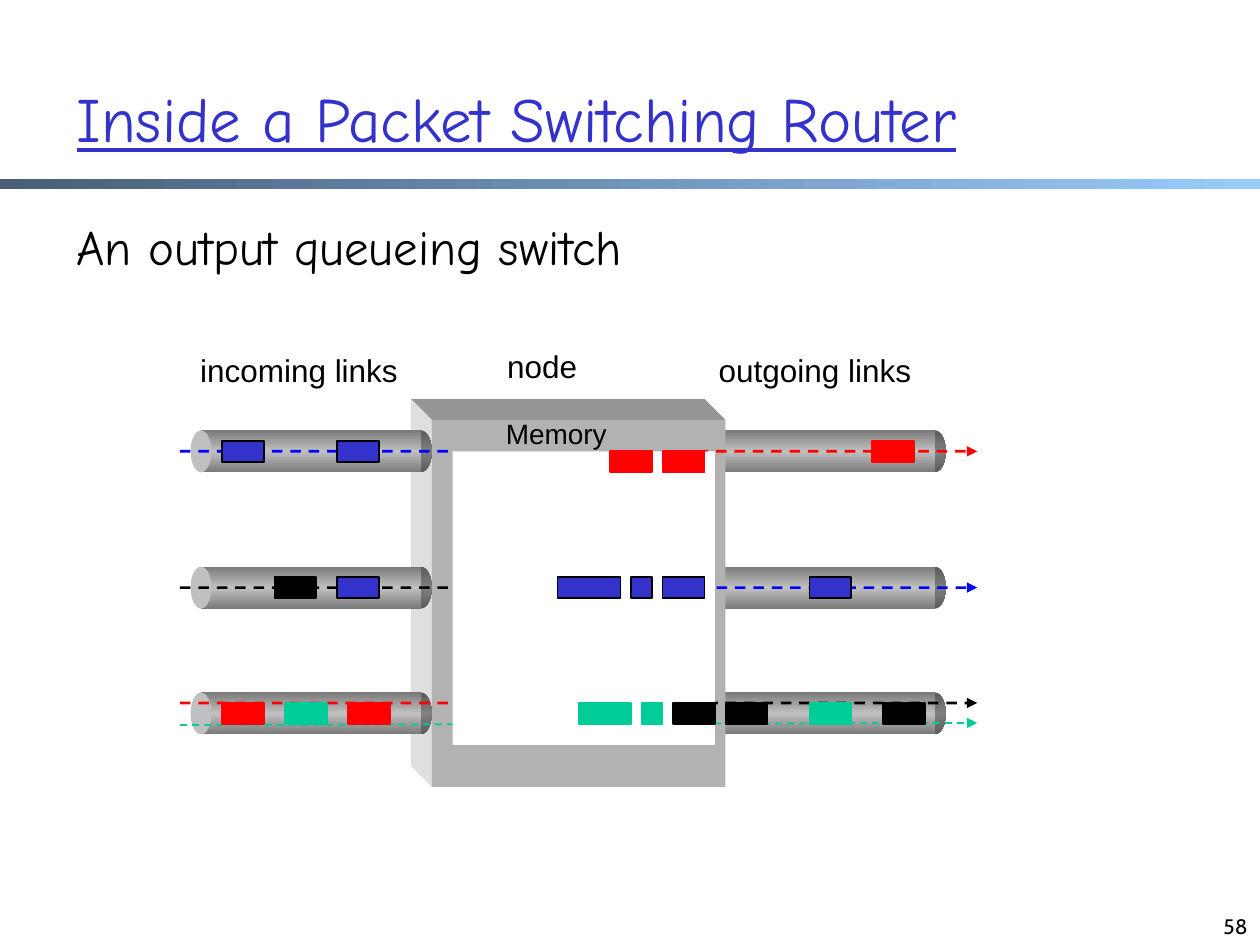
from lxml.etree import SubElement
from pptx import Presentation
from pptx.dml.color import RGBColor
from pptx.enum.dml import MSO_LINE
from pptx.enum.shapes import MSO_CONNECTOR, MSO_SHAPE
from pptx.enum.text import MSO_ANCHOR, PP_ALIGN
from pptx.oxml.ns import qn
from pptx.util import Inches, Pt

BLUE, RED, GREEN, BLACK = "3333CC", "FF0000", "00CC99", "000000"
UNIT = 1 / 12
LINK_ROWS = (3, 16, 28)
PIPE_LEFTS = {"incoming": 1, "outgoing": 50}
PACKETS = [
    (BLUE, BLACK, 4, [(4, 4), (15, 4)]),
    (BLUE, BLACK, 17, [(15, 4), (36, 6), (43, 2), (46, 4), (60, 4)]),
    (BLACK, BLACK, 17, [(9, 4)]),
    (BLACK, BLACK, 29, [(47, 4), (52, 4), (67, 4)]),
    (RED, RED, 29, [(4, 4), (16, 4)]),
    (RED, RED, 5, [(41, 4), (46, 4)]),
    (RED, RED, 4, [(66, 4)]),
    (GREEN, GREEN, 29, [(10, 4), (44, 2), (38, 5), (60, 4)]),
]
ROUTES = [
    ("FF0000", [(0, 29), (27, 29), (50, 5), (76, 5)]),
    ("0000FF", [(0, 5), (26, 5), (51, 18), (76, 18)]),
    ("000000", [(0, 18), (26, 18), (51, 29), (76, 29)]),
]


def color(hex_text):
    """Turn a hex string into a colour."""
    return RGBColor.from_string(hex_text)


def grid_frame(origin, left, top, width, height):
    """Turn grid units into a frame in inches."""
    return (origin[0] + left * UNIT, origin[1] + top * UNIT, width * UNIT, height * UNIT)


def add_block(shapes, preset, frame, fill=None, line=None):
    """Add a preset shape with a plain fill and an optional outline."""
    shape = shapes.add_shape(preset, *map(Inches, frame))
    shape.shadow.inherit = False
    if fill:
        shape.fill.solid()
        shape.fill.fore_color.rgb = color(fill)
    if line:
        shape.line.color.rgb = color(line)
        shape.line.width = Pt(1)
    else:
        shape.line.fill.background()
    return shape


def fill_gradient(shape, colors, angle):
    """Spread evenly spaced colours over a shape."""
    shape.fill.gradient()
    shape.fill.gradient_angle = angle
    stops = next(shape._element.iter(qn("a:gsLst")))
    stops.clear()
    for index, value in enumerate(colors):
        position = str(100000 * index // (len(colors) - 1))
        stop = SubElement(stops, qn("a:gs"), pos=position)
        SubElement(stop, qn("a:srgbClr"), val=value)


def add_text(slide, frame, text, size, font, fill=BLACK, inset=True, wrap=False,
             anchor=MSO_ANCHOR.TOP, align=PP_ALIGN.LEFT, underline=False):
    """Add a one-paragraph text box."""
    text_frame = slide.shapes.add_textbox(*map(Inches, frame)).text_frame
    side, end = (0.1, 0.05) if inset else (0, 0)
    settings = {"margin_left": Inches(side), "margin_right": Inches(side),
                "margin_top": Inches(end), "margin_bottom": Inches(end),
                "word_wrap": wrap, "vertical_anchor": anchor}
    for name, value in settings.items():
        setattr(text_frame, name, value)
    paragraph = text_frame.paragraphs[0]
    paragraph.alignment = align
    run = paragraph.add_run()
    run.text = text
    for name, value in {"size": Pt(size), "name": font, "underline": underline}.items():
        setattr(run.font, name, value)
    run.font.color.rgb = color(fill)


def add_outline(shapes, origin, points, close):
    """Add a freeform through grid points."""
    places = [tuple(Inches(start + step * UNIT) for start, step in zip(origin, point))
              for point in points]
    builder = shapes.build_freeform(*places[0])
    builder.add_line_segments(places[1:], close=close)
    shape = builder.convert_to_shape()
    shape.shadow.inherit = False
    return shape


def style_arrow(arrow, line, width):
    """Give a line its dashes and its arrowhead."""
    arrow.line.color.rgb = color(line)
    arrow.line.width = Pt(width)
    arrow.line.dash_style = MSO_LINE.DASH
    SubElement(arrow._element.spPr.find(qn("a:ln")), qn("a:tailEnd"), type="triangle")


def draw_header(slide, left, top, width):
    """Draw the title, the gradient rule and the subtitle."""
    add_text(slide, (left, top, width, 0.84), "Inside a Packet Switching Router", 36,
             "Comic Neue", BLUE, wrap=True, anchor=MSO_ANCHOR.MIDDLE, underline=True)
    rule = add_block(slide.shapes, MSO_SHAPE.RECTANGLE, (0, top + 0.91, 10.01, 0.08))
    fill_gradient(rule, ("475E76", "99CCFF"), 0)
    add_text(slide, (left, top + 1.16, width, 0.54), "An output queueing switch", 28,
             "Comic Neue", wrap=True)


def draw_pipe(slide, origin, left, top):
    """Draw one link as a grouped pipe."""
    shapes = slide.shapes.add_group_shape().shapes
    end = add_block(shapes, MSO_SHAPE.OVAL, grid_frame(origin, left + 21, top, 2, 4))
    fill_gradient(end, ("5B5B5B", "808080", "5B5B5B"), 270)
    body = add_block(shapes, MSO_SHAPE.RECTANGLE, grid_frame(origin, left + 1, top, 21, 4))
    fill_gradient(body, ("7A7A7A", "C0C0C0", "7A7A7A"), 270)
    add_block(shapes, MSO_SHAPE.OVAL, grid_frame(origin, left, top, 2, 4), "C0C0C0")


def draw_node(slide, origin):
    """Draw the node as a solid box with a top and a left face."""
    faces = {"969696": [(22, 0), (50, 0), (52, 2), (24, 2)],
             "DFDFDF": [(22, 0), (24, 2), (24, 37), (22, 35)]}
    for fill, points in faces.items():
        face = add_outline(slide.shapes, origin, points, True)
        face.fill.solid()
        face.fill.fore_color.rgb = color(fill)
        face.line.fill.background()
    add_block(slide.shapes, MSO_SHAPE.RECTANGLE, grid_frame(origin, 24, 2, 28, 35), "B2B2B2")


def draw_routes(slide, origin):
    """Draw the dashed packet routes."""
    left, top, width, drop = grid_frame(origin, 0, 31.1, 76, -0.2)
    ends = map(Inches, (left, top, left + width, top + drop))
    connector = slide.shapes.add_connector(MSO_CONNECTOR.STRAIGHT, *ends)
    style_arrow(connector, GREEN, 1)
    SubElement(connector._element.spPr, qn("a:effectLst"))
    for line, points in ROUTES:
        route = add_outline(slide.shapes, origin, points, False)
        route.fill.background()
        style_arrow(route, line, 1.5)


def draw_switch(slide, left, top):
    """Draw the switch with its links, routes, packets and labels."""
    origin = (left, top)
    for row in reversed(LINK_ROWS):
        draw_pipe(slide, origin, PIPE_LEFTS["outgoing"], row)
    draw_node(slide, origin)
    for row in LINK_ROWS:
        draw_pipe(slide, origin, PIPE_LEFTS["incoming"], row)
    draw_routes(slide, origin)
    add_block(slide.shapes, MSO_SHAPE.RECTANGLE, grid_frame(origin, 26, 5, 25, 28), "FFFFFF")
    for fill, line, row, spans in PACKETS:
        for start, length in spans:
            add_block(slide.shapes, MSO_SHAPE.RECTANGLE,
                      grid_frame(origin, start, row, length, 2), fill, line)
    labels = [("incoming links", 0.16, -0.38, 1.59), ("outgoing links", 4.28, -0.38, 1.54),
              ("node", 2.6, -0.41, 0.56)]
    for text, across, down, width in labels:
        add_text(slide, (left + across, top + down, width, 0.3), text, 18, "Arial", inset=False)
    add_text(slide, (left + 2.49, top + 0.09, 1.01, 0.37), "Memory", 16, "Arial")


def main():
    """Build the slide and save it."""
    presentation = Presentation()
    presentation.slide_width = Inches(10.01)
    presentation.slide_height = Inches(7.51)
    slide = presentation.slides.add_slide(presentation.slide_layouts[6])
    draw_header(slide, 0.51, 0.51, 8.51)
    draw_switch(slide, 1.43, 3.17)
    add_text(slide, (7.68, 7.01, 2.33, 0.5), "58", 12, "Cabin", wrap=True,
             anchor=MSO_ANCHOR.BOTTOM, align=PP_ALIGN.RIGHT)
    presentation.save("out.pptx")


if __name__ == "__main__":
    main()
